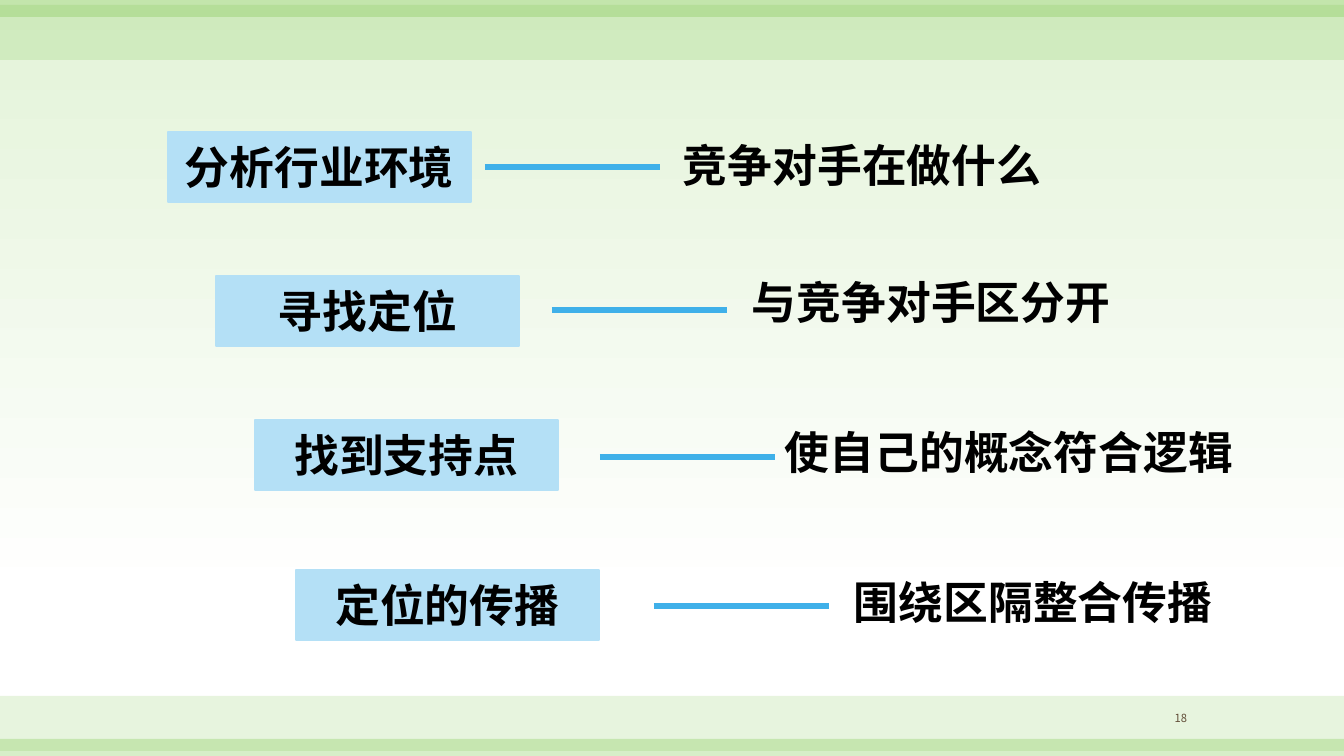
"""Build a slide of four positioning steps, each linked to its explanation."""
from lxml import etree
from pptx import Presentation, util as u
from pptx.dml.color import RGBColor
from pptx.enum import shapes, text
from pptx.oxml.ns import qn

WIDTH, HEIGHT = 1344, 756
STEP_W, STEP_H, LINK_W = 303, 70, 175
NOTE_H, NOTE_CHAR, NOTE_MARGIN = 65, 45, 24
CJK = "Noto Sans CJK SC"
BLACK, STEP_FILL, LINK_COLOR = "000000", "B4E0F6", "3FB0E9"
BAND_COLOR, PAGE_COLOR = "72C23C", "624D38"
BACKDROP = [("E3F3D8", 0), ("FFFFFF", 0.79)]

# step, left, top; link left, middle; note, left, top
ROWS = [
    (("分析行业环境", 168, 132), (485, 167), ("竞争对手在做什么", 673, 133)),
    (("寻找定位", 216, 276), (552, 310), ("与竞争对手区分开", 742, 270)),
    (("找到支持点", 255, 420), (600, 457), ("使自己的概念符合逻辑", 775, 420)),
    (("定位的传播", 296, 570), (654, 606), ("围绕区隔整合传播", 844, 570)),
]
# top, height, opacity in percent
BANDS = [(696, 55, 17), (739, 17, 28), (5, 55, 17), (0, 17, 28)]
PAGE = ("18", 1126, 705, 71, 26)


def px(*lengths):
    return [round(length * 914400 / 100.8) for length in lengths]


def rgb(value):
    return RGBColor.from_string(value)


def write(shape, words, size, font, color, bold, align):
    paragraph = shape.text_frame.paragraphs[0]
    paragraph.alignment = align
    run = paragraph.add_run()
    run.text = words
    run.font.size, run.font.bold, run.font.name = u.Pt(size), bold, font
    run.font.color.rgb = rgb(color)
    etree.SubElement(run.font._element, qn("a:ea"), typeface=CJK)


def add_rect(slide, box, color):
    rect = slide.shapes.add_shape(shapes.MSO_SHAPE.RECTANGLE, *px(*box))
    rect.shadow.inherit = False
    rect.fill.solid()
    rect.fill.fore_color.rgb = rgb(color)
    return rect


def add_band(slide, top, height, opacity):
    band = add_rect(slide, (0, top, WIDTH, height), BAND_COLOR)
    band.line.fill.background()
    color = band._element.spPr.find(qn("a:solidFill")).find(qn("a:srgbClr"))
    etree.SubElement(color, qn("a:alpha"), val=str(opacity * 1000))


def add_step(slide, words, left, top):
    step = add_rect(slide, (left, top, STEP_W, STEP_H), STEP_FILL)
    step.line.color.rgb = rgb(STEP_FILL)
    step.line.width = u.Pt(1)
    step.text_frame.vertical_anchor = text.MSO_ANCHOR.MIDDLE
    write(step, words, 32, "Arial", BLACK, True, text.PP_ALIGN.CENTER)


def add_link(slide, left, middle):
    link = slide.shapes.add_connector(
        shapes.MSO_CONNECTOR.STRAIGHT, *px(left, middle, left + LINK_W, middle))
    link.line.color.rgb = rgb(LINK_COLOR)
    link.line.width = u.Pt(4.5)
    etree.SubElement(link._element.spPr, qn("a:effectLst"))


def add_note(slide, words, left, top):
    width = len(words) * NOTE_CHAR + NOTE_MARGIN
    note = slide.shapes.add_textbox(*px(left, top, width, NOTE_H))
    note.text_frame.word_wrap = False
    note.text_frame.auto_size = text.MSO_AUTO_SIZE.SHAPE_TO_FIT_TEXT
    write(note, words, 32, CJK, BLACK, True, text.PP_ALIGN.LEFT)


def add_page(slide, words, *box):
    page = slide.shapes.add_textbox(*px(*box))
    page.text_frame.word_wrap = True
    page.text_frame.vertical_anchor = text.MSO_ANCHOR.MIDDLE
    write(page, words, 8, CJK, PAGE_COLOR, False, text.PP_ALIGN.RIGHT)


def main():
    deck = Presentation()
    deck.slide_width, deck.slide_height = px(WIDTH, HEIGHT)
    slide = deck.slides.add_slide(deck.slide_layouts[6])
    backdrop = slide.background.fill
    backdrop.gradient()
    backdrop.gradient_angle = 270
    for stop, (color, position) in zip(backdrop.gradient_stops, BACKDROP):
        stop.color.rgb = rgb(color)
        stop.position = position
    for band in BANDS:
        add_band(slide, *band)
    for step, link, note in ROWS:
        add_step(slide, *step)
        add_link(slide, *link)
        add_note(slide, *note)
    add_page(slide, *PAGE)
    deck.save("out.pptx")


if __name__ == "__main__":
    main()
